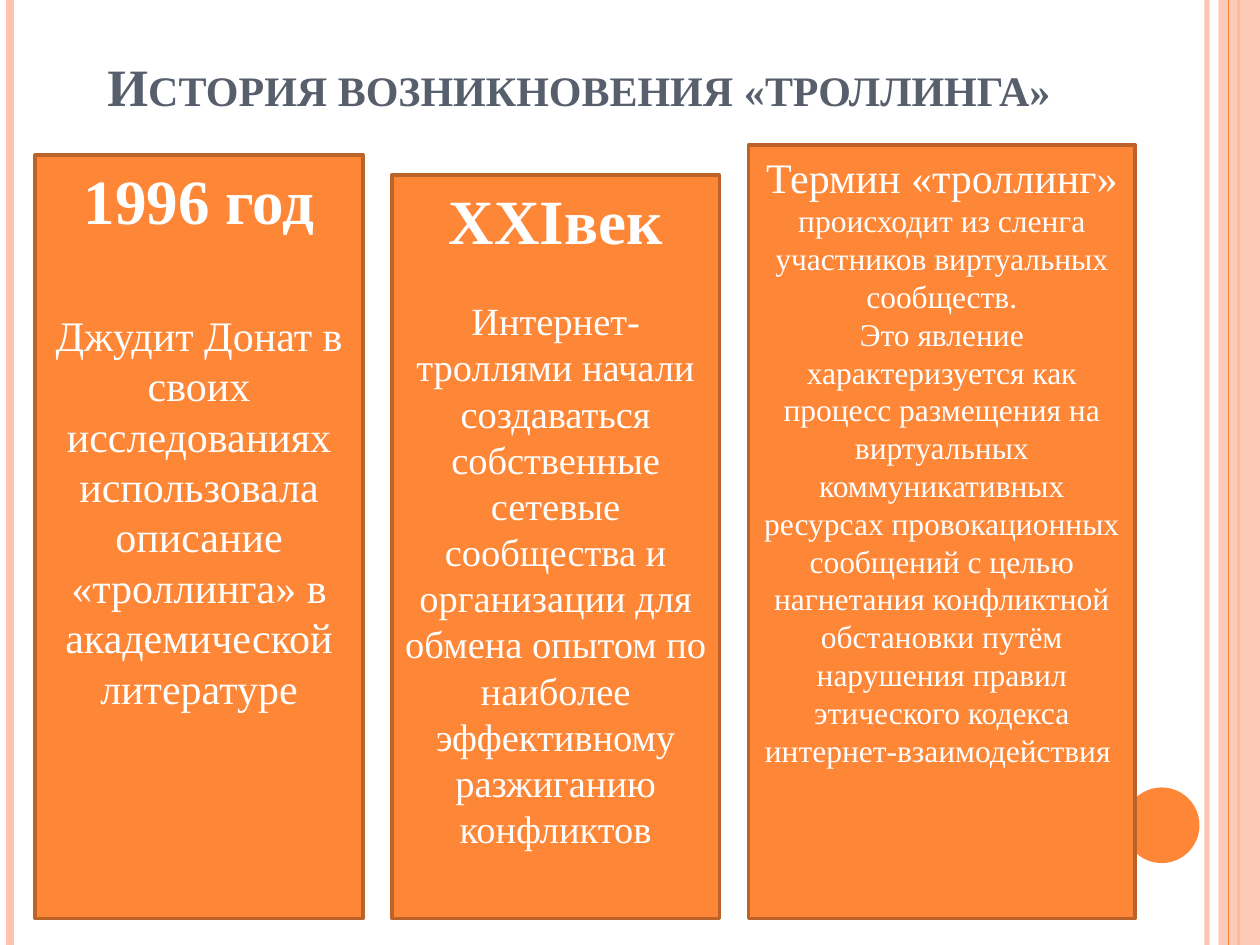
from dataclasses import dataclass

from lxml import etree
from pptx import Presentation
from pptx import util as u
from pptx.dml.color import RGBColor
from pptx.enum import shapes, text
from pptx.oxml.ns import qn

W, H = 10, 7.5
FONT = "Times New Roman"
COLORS = {"orange": "FE8637", "peach": "FEC3AE", "border": "BC6329",
          "title": "575F6D", "white": "FFFFFF"}


@dataclass
class Stripe:
    x: float
    color: str
    width: float
    opacity: int = 100


@dataclass
class Run:
    text: str
    size: float
    bold: bool = False


@dataclass
class Para:
    runs: list[Run]
    gap: float = 0  # space before, points


@dataclass
class Card:
    left: float
    top: float
    width: float
    bottom: float
    paras: list[Para]


def rgb(name: str) -> RGBColor:
    return RGBColor.from_string(COLORS[name])


def set_opacity(fill, percent: int) -> None:
    """Add an alpha value to the solid colour of a shape or line."""
    if percent < 100:
        color = next(fill.iter(qn("a:srgbClr")))
        etree.SubElement(color, qn("a:alpha")).set("val", str(percent * 1000))


def add_stripe(slide, stripe: Stripe) -> None:
    x = u.Inches(stripe.x)
    line = slide.shapes.add_connector(
        shapes.MSO_CONNECTOR.STRAIGHT, x, 0, x, u.Inches(H))
    line.line.color.rgb = rgb(stripe.color)
    line.line.width = u.Pt(stripe.width)
    sp_pr = line._element.spPr
    set_opacity(sp_pr, stripe.opacity)
    etree.SubElement(sp_pr, qn("a:effectLst"))


def add_block(slide, kind, left: float, top: float, width: float,
              height: float, color: str):
    sp = slide.shapes.add_shape(kind, *map(u.Inches, (left, top, width, height)))
    sp.shadow.inherit = False
    sp.fill.solid()
    sp.fill.fore_color.rgb = rgb(color)
    sp.line.fill.background()
    return sp


def write(tf, paras: list[Para], color: str) -> None:
    tf.word_wrap = True
    for i, para in enumerate(paras):
        p = tf.add_paragraph() if i else tf.paragraphs[0]
        p.alignment = text.PP_ALIGN.CENTER
        p.space_before = u.Pt(para.gap)
        for run in para.runs:
            r = p.add_run()
            r.text = run.text
            r.font.name = FONT
            r.font.size = u.Pt(run.size)
            r.font.bold = run.bold
            r.font.color.rgb = rgb(color)


def add_card(slide, card: Card) -> None:
    sp = add_block(slide, shapes.MSO_SHAPE.RECTANGLE, card.left, card.top,
                   card.width, card.bottom - card.top, "orange")
    sp.line.color.rgb = rgb("border")
    sp.line.width = u.Pt(2)
    sp.text_frame.vertical_anchor = text.MSO_ANCHOR.TOP
    write(sp.text_frame, card.paras, "white")


def add_title(slide, title: str) -> None:
    box = slide.shapes.add_textbox(*map(u.Inches, (0.51, 0.13, 8.17, 0.85)))
    tf = box.text_frame
    write(tf, [Para([Run(title, 30, True)])], "title")
    tf.vertical_anchor = text.MSO_ANCHOR.BOTTOM
    tf.paragraphs[0].runs[0].font._element.set("cap", "small")


STRIPES = [
    Stripe(9.58, "peach", 3, 93),
    Stripe(0.08, "peach", 4.5),
    Stripe(9.83, "orange", 1.5),
]
EDGE_STRIPE = Stripe(9.75, "orange", 0.75)

BOTTOM = 7.29
CARDS = [
    Card(3.11, 1.39, 2.6, BOTTOM, [
        Para([Run("XXIвек", 36, True)]),
        Para([Run("Интернет-троллями начали создаваться собственные сетевые "
                  "сообщества и организации для обмена опытом по наиболее "
                  "эффективному разжиганию конфликтов", 22)], gap=23),
    ]),
    Card(0.28, 1.23, 2.6, BOTTOM, [
        Para([Run("1996 год", 36, True)]),
        Para([Run("Джудит Донат в своих исследованиях использовала описание "
                  "«троллинга» в академической литературе", 24)], gap=41.5),
    ]),
    Card(5.94, 1.15, 3.07, BOTTOM, [
        Para([Run("Термин «троллинг» ", 24),
              Run("происходит из сленга участников виртуальных сообществ.", 18)]),
        Para([Run("Это явление характеризуется как процесс размещения на "
                  "виртуальных коммуникативных ресурсах провокационных "
                  "сообщений с целью нагнетания конфликтной обстановки путём "
                  "нарушения правил этического кодекса "
                  "интернет-взаимодействия ", 18)]),
    ]),
]


def main() -> None:
    prs = Presentation()
    prs.slide_width, prs.slide_height = u.Inches(W), u.Inches(H)
    s = prs.slides.add_slide(prs.slide_layouts[6])

    # Side decoration
    for stripe in STRIPES:
        add_stripe(s, stripe)
    band = add_block(s, shapes.MSO_SHAPE.RECTANGLE, 9.67, 0, 0.33, H, "peach")
    set_opacity(band._element.spPr, 87)
    add_stripe(s, EDGE_STRIPE)
    add_block(s, shapes.MSO_SHAPE.OVAL, 8.92, 6.25, 0.6, 0.6, "orange")

    # Title and the three cards
    add_title(s, "История возникновения «троллинга»")
    for card in CARDS:
        add_card(s, card)

    prs.save("out.pptx")


if __name__ == "__main__":
    main()
